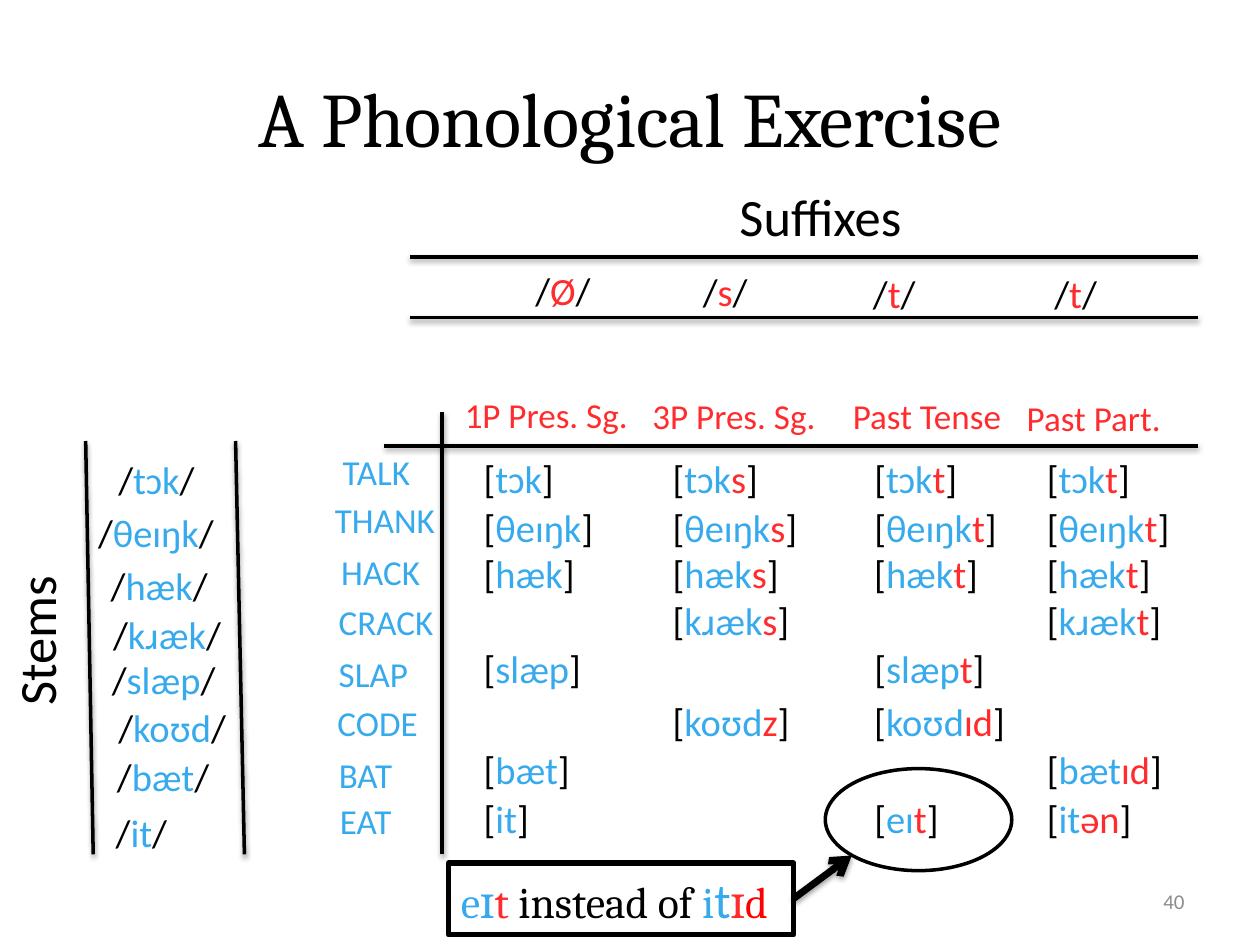
from lxml import etree
from pptx import Presentation
from pptx.dml.color import RGBColor
from pptx.enum import shapes, text
from pptx.oxml import parse_xml
from pptx.oxml.ns import nsdecls, qn
from pptx.util import Inches, Pt

BLACK, STEM, SUFFIX, GRAY = "000000", "37AAED", "FF2B2C", "8C8C8C"

# suffix, left, top, width, indent level
SUFFIXES = [("Ø", 3.65, 2.07, 1.35, 1), ("s", 5.48, 2.08, 0.69, 0),
            ("t", 6.83, 2.09, 0.67, 0), ("t", 8.27, 2.09, 0.67, 0)]
# heading, left, top, width
HEADINGS = [("1P Pres. Sg.", 3.59, 3.07, 1.51), ("3P Pres. Sg.", 5.08, 3.08, 1.51),
            ("Past Tense", 6.67, 3.08, 1.42), ("Past Part.", 8.05, 3.1, 1.29)]
# gloss, left, top, width
GLOSSES = [("TALK", 2.62, 3.53, 0.78), ("THANK", 2.56, 3.91, 1.02),
           ("HACK", 2.61, 4.32, 0.85), ("CRACK", 2.59, 4.72, 0.97),
           ("SLAP", 2.59, 5.13, 0.76), ("CODE", 2.58, 5.52, 0.85),
           ("BAT", 2.59, 5.93, 0.65), ("EAT", 2.6, 6.3, 0.64)]
# stem, left, top
STEMS = [("tɔk", 0.84, 3.57), ("θeɪŋk", 0.68, 3.99), ("hæk", 0.78, 4.41),
         ("kɹæk", 0.8, 4.8), ("slæp", 0.79, 5.16), ("koʊd", 0.84, 5.54),
         ("bæt", 0.83, 5.93), ("it", 0.82, 6.37)]
# row top, stem, suffix in each column (None leaves a gap)
FORMS = [(3.56, "tɔk", ("", "s", "t", "t")),
         (3.95, "θeɪŋk", ("", "s", "t", "t")),
         (4.32, "hæk", ("", "s", "t", "t")),
         (4.69, "kɹæk", (None, "s", None, "t")),
         (5.07, "slæp", ("", None, "t", None)),
         (5.49, "koʊd", (None, "z", "ɪd", None)),
         (5.87, "bæt", ("", None, None, "ɪd")),
         (6.26, "it", ("", None, None, "ən")),
         (6.26, "eɪ", (None, None, "t", None))]
COLUMNS = (3.74, 5.24, 6.84, 8.21)
STEM_WIDTHS = {"tɔk": 0.77, "θeɪŋk": 1.08, "hæk": 0.93, "kɹæk": 1.02,
               "slæp": 0.98, "koʊd": 1.04, "bæt": 0.9, "it": 0.57, "eɪ": 0.61}
SUFFIX_WIDTHS = {"": 0, "s": 0.12, "t": 0.11, "z": 0.11, "ɪd": 0.23, "ən": 0.31}
# start and end of each rule
RULES = [(3.51, 3.27, 3.51, 6.78), (9.51, 3.54, 3.05, 3.54),
         (9.51, 2.52, 3.25, 2.52), (9.51, 2.04, 3.25, 2.04),
         (1.87, 3.5, 1.94, 6.78), (0.68, 3.5, 0.74, 6.78)]


def rgb(hex_code):
    return RGBColor.from_string(hex_code)


def style(font, size, color, name="Calibri"):
    font.size, font.name = Pt(size), name
    font.color.rgb = rgb(color)


def add_runs(paragraph, runs):
    """Add runs given as (wording, colour, size, font name)."""
    for wording, color, size, name in runs:
        run = paragraph.add_run()
        run.text = wording
        style(run.font, size, color, name)


def add_label(slide, parts, left, top, width, size=22, wrap=False):
    """Add a one-line text of (wording, colour) parts."""
    height = {20: 0.44, 22: 0.47, 30: 0.61}[size]
    label = slide.shapes.add_textbox(
        Inches(left), Inches(top), Inches(width), Inches(height))
    frame = label.text_frame
    frame.word_wrap = wrap
    frame.auto_size = text.MSO_AUTO_SIZE.SHAPE_TO_FIT_TEXT
    add_runs(frame.paragraphs[0],
             [(wording, color, size, "Calibri") for wording, color in parts])
    return label


def add_line(slide, ends, weight=2):
    line = slide.shapes.add_connector(
        shapes.MSO_CONNECTOR.STRAIGHT, *map(Inches, ends))
    line.line.color.rgb = rgb(BLACK)
    line.line.width = Pt(weight)
    line._element.spPr.append(parse_xml(
        f'<a:effectLst {nsdecls("a")}><a:outerShdw blurRad="39370" dist="20320" '
        'dir="5400000" rotWithShape="0"><a:srgbClr val="000000">'
        '<a:alpha val="38000"/></a:srgbClr></a:outerShdw></a:effectLst>'))
    return line


def add_outline(slide, kind, left, top, width, height, weight):
    outline = slide.shapes.add_shape(
        kind, Inches(left), Inches(top), Inches(width), Inches(height))
    outline.shadow.inherit = False
    outline.fill.background()
    outline.line.color.rgb = rgb(BLACK)
    outline.line.width = Pt(weight)
    return outline


def add_title(slide):
    title = slide.shapes.title
    title.left, title.top = Inches(0.5), Inches(0.3)
    title.width, title.height = Inches(9), Inches(1.25)
    title.text_frame.text = "A Phonological Exercise"
    style(title.text_frame.paragraphs[0].runs[0].font, 44, BLACK, "Cambria")


def add_paradigm(slide):
    for top, stem, suffixes in FORMS:
        for left, suffix in zip(COLUMNS, suffixes):
            if suffix is None:
                continue
            parts = [("[", BLACK), (stem, STEM), (suffix, SUFFIX), ("]", BLACK)]
            add_label(slide, [part for part in parts if part[0]], left, top,
                      STEM_WIDTHS[stem] + SUFFIX_WIDTHS[suffix])
    for heading, *place in HEADINGS:
        add_label(slide, [(heading, SUFFIX)], *place, size=20)
    for gloss, *place in GLOSSES:
        add_label(slide, [(gloss, STEM)], *place, size=20)


def add_affixes(slide):
    add_label(slide, [("Suffixes", BLACK)], 5.77, 1.41, 1.51, size=30)
    add_label(slide, [("Stems", BLACK)], -0.36, 4.75, 1.29, size=30).rotation = 270
    for suffix, left, top, width, level in SUFFIXES:
        label = add_label(slide, [("/", BLACK), (suffix, SUFFIX), ("/", BLACK)],
                          left, top, width, wrap=True)
        label.text_frame.paragraphs[0].level = level
    for stem, left, top in STEMS:
        add_label(slide, [("/", BLACK), (stem, STEM), ("/", BLACK)],
                  left, top, STEM_WIDTHS[stem] + 0.05)


def add_callout(slide):
    add_outline(slide, shapes.MSO_SHAPE.OVAL, 6.55, 6.1, 1.48, 0.81, 2)
    callout = add_outline(slide, shapes.MSO_SHAPE.RECTANGLE, 3.56, 6.85, 2.74, 0.57, 3)
    frame = callout.text_frame
    frame.word_wrap = True
    frame.auto_size = text.MSO_AUTO_SIZE.SHAPE_TO_FIT_TEXT
    frame.vertical_anchor = text.MSO_ANCHOR.TOP
    remark = frame.paragraphs[0]
    remark.alignment = text.PP_ALIGN.LEFT
    add_runs(remark, [("eɪ", STEM, 25, "Cambria"), ("t ", SUFFIX, 25, "Cambria"),
                      ("instead of ", BLACK, 25, "Cambria"),
                      ("i", STEM, 25, "Cambria"), ("t", STEM, 28, "Calibri"),
                      ("ɪ", SUFFIX, 25, "Cambria"), ("d", "FF0000", 25, "Cambria")])
    arrow = add_line(slide, (6.3, 7.13, 6.76, 6.79), 4)
    etree.SubElement(arrow.line._get_or_add_ln(), qn("a:tailEnd"), type="arrow")


def add_page_number(slide):
    box = slide.shapes.add_textbox(Inches(7.17), Inches(6.95), Inches(2.33), Inches(0.4))
    box.text_frame.word_wrap = True
    box.text_frame.vertical_anchor = text.MSO_ANCHOR.MIDDLE
    number = box.text_frame.paragraphs[0]
    number.alignment = text.PP_ALIGN.RIGHT
    add_runs(number, [("40", GRAY, 12, "Calibri")])


def main():
    deck = Presentation()
    deck.slide_width, deck.slide_height = Inches(10), Inches(7.5)
    slide = deck.slides.add_slide(deck.slide_layouts[5])
    add_title(slide)
    add_paradigm(slide)
    add_affixes(slide)
    for ends in RULES:
        add_line(slide, ends)
    add_callout(slide)
    add_page_number(slide)
    deck.save("out.pptx")


if __name__ == "__main__":
    main()
